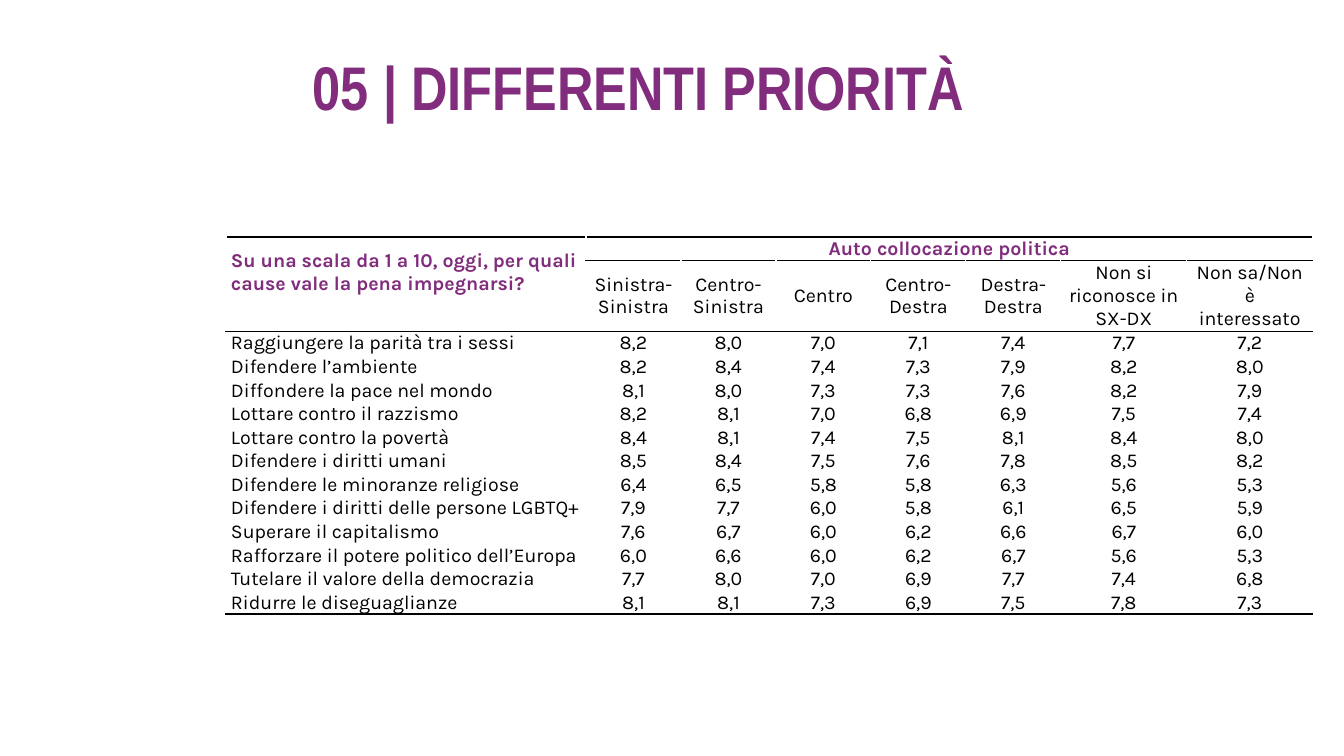
from lxml import etree
from pptx import Presentation, util as u
from pptx.dml.color import RGBColor
from pptx.enum import text
from pptx.oxml import ns

PX = 914400 / 100.8
PURPLE, BLACK, WHITE = "812C7C", "000000", "FFFFFF"
LEFT, CENTER = text.PP_ALIGN.LEFT, text.PP_ALIGN.CENTER
MIDDLE, BOTTOM = text.MSO_ANCHOR.MIDDLE, text.MSO_ANCHOR.BOTTOM

TITLE = "05 | DIFFERENTI PRIORITÀ"
QUESTION = "Su una scala da 1 a 10, oggi, per quali cause vale la pena impegnarsi?"
POSITIONS_TITLE = "Auto collocazione politica"
POSITIONS = ["Sinistra-Sinistra", "Centro-Sinistra", "Centro", "Centro-Destra",
             "Destra-Destra", "Non si riconosce in SX-DX", "Non sa/Non è interessato"]
CAUSES = {
    "Raggiungere la parità tra i sessi": "8,2 8,0 7,0 7,1 7,4 7,7 7,2",
    "Difendere l’ambiente": "8,2 8,4 7,4 7,3 7,9 8,2 8,0",
    "Diffondere la pace nel mondo": "8,1 8,0 7,3 7,3 7,6 8,2 7,9",
    "Lottare contro il razzismo": "8,2 8,1 7,0 6,8 6,9 7,5 7,4",
    "Lottare contro la povertà": "8,4 8,1 7,4 7,5 8,1 8,4 8,0",
    "Difendere i diritti umani": "8,5 8,4 7,5 7,6 7,8 8,5 8,2",
    "Difendere le minoranze religiose": "6,4 6,5 5,8 5,8 6,3 5,6 5,3",
    "Difendere i diritti delle persone LGBTQ+": "7,9 7,7 6,0 5,8 6,1 6,5 5,9",
    "Superare il capitalismo": "7,6 6,7 6,0 6,2 6,6 6,7 6,0",
    "Rafforzare il potere politico dell’Europa": "6,0 6,6 6,0 6,2 6,7 5,6 5,3",
    "Tutelare il valore della democrazia": "7,7 8,0 7,0 6,9 7,7 7,4 6,8",
    "Ridurre le diseguaglianze": "8,1 8,1 7,3 6,9 7,5 7,8 7,3",
}
COLUMN_WIDTHS = [360] + [95] * 5 + [126] * 2
ROW_HEIGHTS = [23, 68] + [22] * len(CAUSES)


def px(length):
    return u.Emu(round(length * PX))


def color(hex_code):
    return RGBColor.from_string(hex_code)


def set_all(target, values):
    for name, value in values.items():
        setattr(target, name, value)


def write(frame, wording, align, hex_code, **font):
    para = frame.paragraphs[0]
    para.alignment = align
    span = para.add_run()
    span.text = wording
    set_all(span.font, font)
    span.font.color.rgb = color(hex_code)
    return para


def add_title(page):
    box = page.shapes.add_textbox(px(303), px(40), px(947), px(102))
    set_all(box.text_frame, {"word_wrap": True, "vertical_anchor": MIDDLE})
    para = write(box.text_frame, TITLE, LEFT, PURPLE,
                 name="Arial Narrow", size=u.Pt(44), bold=True)
    para.line_spacing = 0.9


def set_borders(cell, top, bottom):
    """Draw the four cell edges; the left and right ones are white."""
    props = cell._tc.get_or_add_tcPr()
    for side, hex_code in zip("LRTB", (WHITE, WHITE, top, bottom)):
        line = etree.SubElement(props, ns.qn(f"a:ln{side}"), w=str(u.Pt(1)))
        fill = etree.SubElement(line, ns.qn("a:solidFill"))
        etree.SubElement(fill, ns.qn("a:srgbClr"), val=hex_code)


def fill_cell(cell, wording, align, anchor, hex_code=BLACK, bold=False):
    set_all(cell, {"margin_left": px(5), "margin_right": px(5), "margin_top": 0,
                   "margin_bottom": 0, "vertical_anchor": anchor})
    write(cell.text_frame, wording, align, hex_code,
          name="Karla", size=u.Pt(14), bold=bold)


def add_priorities(page):
    frame = page.shapes.add_table(len(ROW_HEIGHTS), len(COLUMN_WIDTHS), px(226), px(237),
                                  px(sum(COLUMN_WIDTHS)), px(sum(ROW_HEIGHTS)))
    table = frame.table
    set_all(table, {"first_row": False, "horz_banding": False})
    for column, width in zip(table.columns, COLUMN_WIDTHS):
        column.width = px(width)
    last = len(ROW_HEIGHTS) - 1
    for index, height in enumerate(ROW_HEIGHTS):
        table.rows[index].height = px(height)
        for cell in table.rows[index].cells:
            set_borders(cell, BLACK if index <= 2 else WHITE,
                        BLACK if index in (0, 1, last) else WHITE)
            cell.fill.background()

    question = table.cell(0, 0)
    question.merge(table.cell(1, 0))
    fill_cell(question, QUESTION, LEFT, MIDDLE, PURPLE, True)
    question.margin_bottom = px(23)
    heading = table.cell(0, 1)
    heading.merge(table.cell(0, len(POSITIONS)))
    fill_cell(heading, POSITIONS_TITLE, CENTER, MIDDLE, PURPLE, True)
    for column, position in enumerate(POSITIONS, 1):
        fill_cell(table.cell(1, column), position, CENTER, MIDDLE)
    for row, (cause, scores) in enumerate(CAUSES.items(), 2):
        fill_cell(table.cell(row, 0), cause, LEFT, BOTTOM)
        for column, score in enumerate(scores.split(), 1):
            fill_cell(table.cell(row, column), score, CENTER, BOTTOM)


def main():
    deck = Presentation()
    set_all(deck, {"slide_width": px(1344), "slide_height": px(756)})
    page = deck.slides.add_slide(deck.slide_layouts[6])
    add_title(page)
    add_priorities(page)
    deck.save("out.pptx")


if __name__ == "__main__":
    main()
